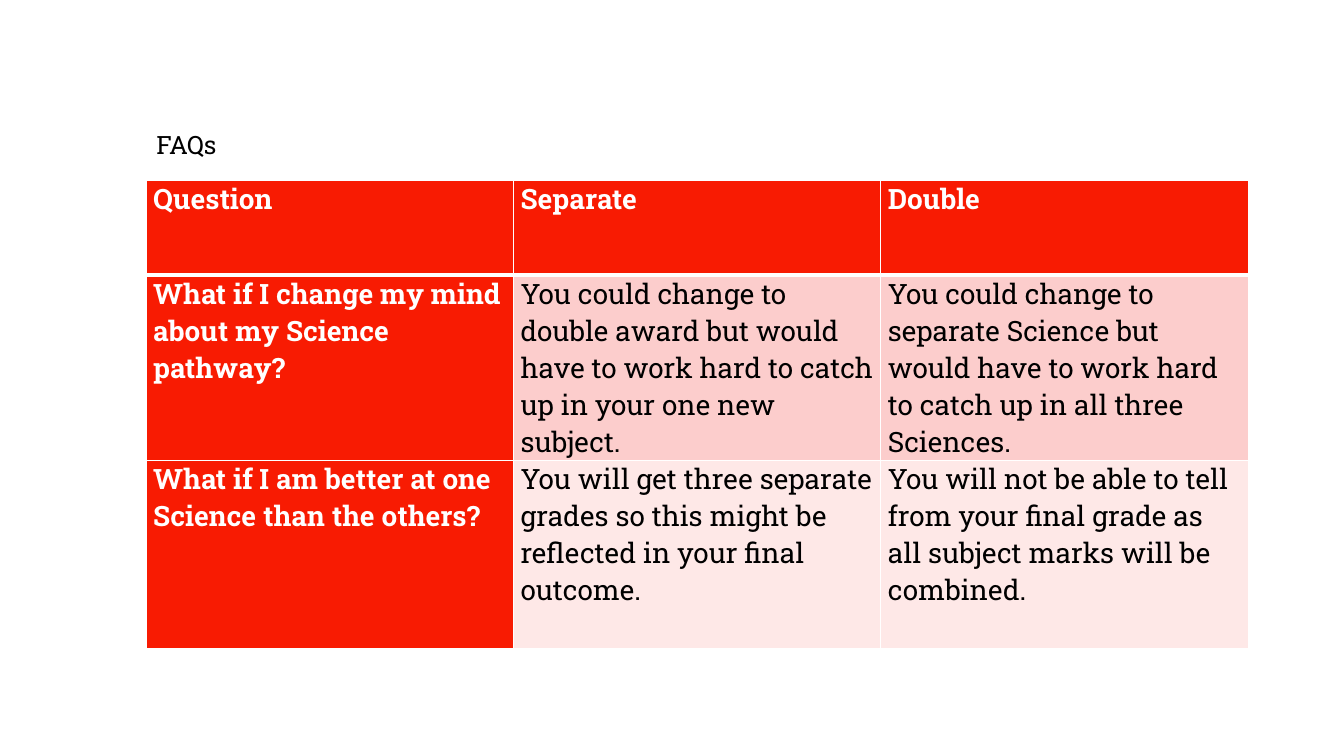
from lxml.etree import SubElement
from pptx import Presentation
from pptx.dml.color import RGBColor
from pptx.enum.text import MSO_ANCHOR as Anchor, MSO_AUTO_SIZE as AutoSize, PP_ALIGN as Align
from pptx.oxml.ns import qn
from pptx.util import Inches, Pt

RED, PINK, PALE_PINK = "F81B02", "FCCDCC", "FEE8E7"
WHITE, BLACK = "FFFFFF", "000000"

FAQS = [
    ("Question", "Separate", "Double"),
    ("What if I change my mind about my Science pathway?",
     "You could change to double award but would have to work hard to catch up in your one new subject.",
     "You could change to separate Science but would have to work hard to catch up in all three Sciences."),
    ("What if I am better at one Science than the others?",
     "You will get three separate grades so this might be reflected in your final outcome.",
     "You will not be able to tell from your final grade as all subject marks will be combined."),
]
ROW_HEIGHTS = [0.94, 1.75, 1.87]
ANSWER_FILLS = [RED, PINK, PALE_PINK]


def rgb(hex_color):
    return RGBColor.from_string(hex_color)


class FaqSlide:
    font_name = "Roboto Slab"

    def __init__(self, prs):
        self.slide = prs.slides.add_slide(prs.slide_layouts[5])

    def format_text(self, paragraph, size, color, bold=False):
        for run in paragraph.runs:
            font = run.font
            font.name, font.size, font.bold = self.font_name, Pt(size), bold
            font.color.rgb = rgb(color)

    def title(self, text, left, top, width, height):
        heading = self.slide.shapes.title
        heading.left, heading.top = Inches(left), Inches(top)
        heading.width, heading.height = Inches(width), Inches(height)
        frame = heading.text_frame
        frame.text = text
        frame.word_wrap = False
        frame.auto_size = AutoSize.NONE
        frame.vertical_anchor = Anchor.TOP
        frame.paragraphs[0].alignment = Align.LEFT
        self.format_text(frame.paragraphs[0], 18, BLACK)

    def cell_borders(self, cell, widths):
        """Draw white borders; widths are points for left, right, top, bottom."""
        properties = cell._tc.get_or_add_tcPr()
        for side, width in zip("LRTB", widths):
            line = SubElement(properties, qn(f"a:ln{side}"), w=str(Pt(width)))
            fill = SubElement(line, qn("a:solidFill"))
            SubElement(fill, qn("a:srgbClr"), val=WHITE)

    def table(self, rows, left, top, width, row_heights):
        frame = self.slide.shapes.add_table(
            len(rows), len(rows[0]), Inches(left), Inches(top),
            Inches(width), Inches(sum(row_heights)))
        grid = frame.table
        for row, height in zip(grid.rows, row_heights):
            row.height = Inches(height)
        for r, texts in enumerate(rows):
            for c, text in enumerate(texts):
                cell = grid.cell(r, c)
                is_heading = r == 0 or c == 0
                cell.text = text
                cell.margin_left = cell.margin_right = Inches(0.07)
                cell.margin_top = cell.margin_bottom = 0
                self.cell_borders(cell, (1, 1, 3 if r == 1 else 1, 3 if r == 0 else 1))
                cell.fill.solid()
                cell.fill.fore_color.rgb = rgb(RED if is_heading else ANSWER_FILLS[r])
                self.format_text(cell.text_frame.paragraphs[0], 20,
                                 WHITE if is_heading else BLACK, is_heading)


def main():
    prs = Presentation()
    prs.slide_width, prs.slide_height = Inches(13.33), Inches(7.5)
    faq = FaqSlide(prs)
    faq.title("FAQs", 1.45, 1.23, 0.8, 0.71)
    faq.table(FAQS, 1.45, 1.79, 10.93, ROW_HEIGHTS)
    prs.save("out.pptx")


if __name__ == "__main__":
    main()
